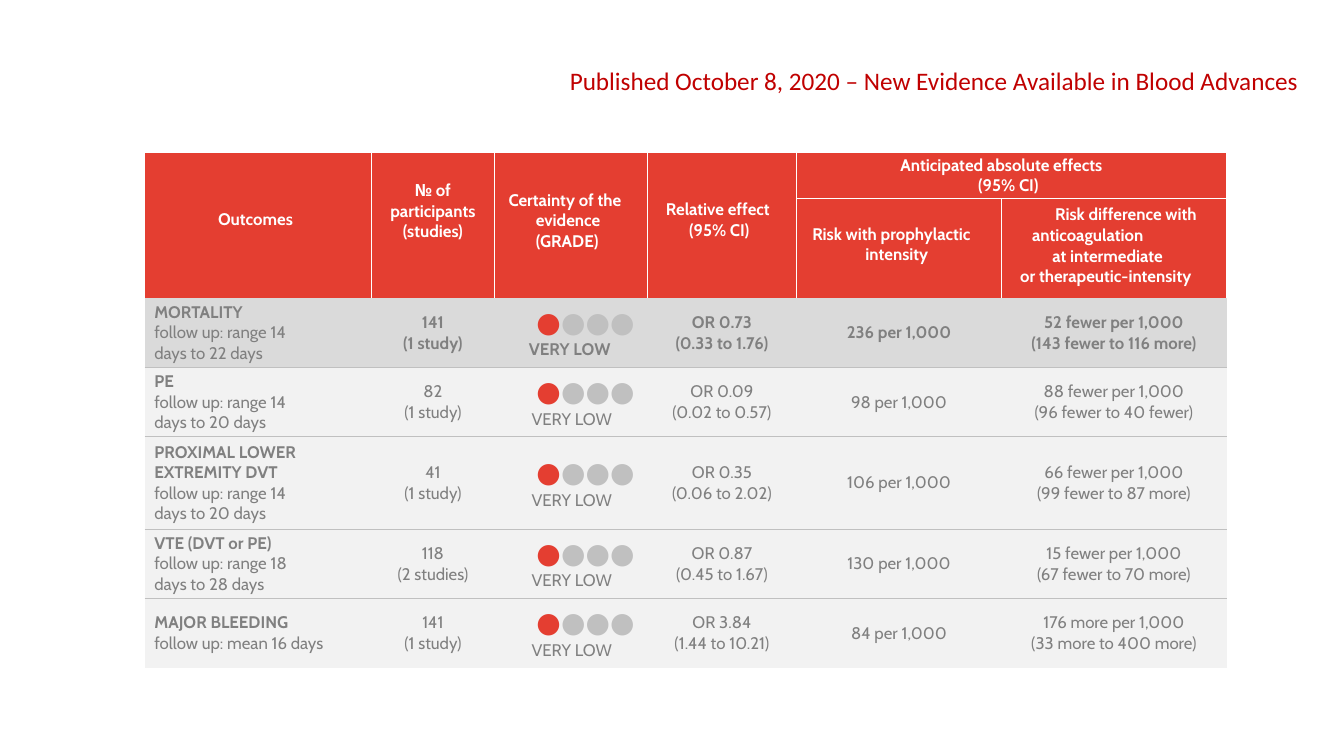
from dataclasses import dataclass
from lxml.etree import SubElement
from pptx import Presentation
from pptx.dml.color import RGBColor
from pptx.enum.text import MSO_ANCHOR, PP_ALIGN
from pptx.oxml.ns import qn
from pptx.util import Pt

RED = RGBColor(0xE4, 0x3E, 0x31)
DARK = RGBColor(0xC0, 0x00, 0x00)
WHITE = RGBColor(0xFF, 0xFF, 0xFF)
GRAY = RGBColor(0x80, 0x80, 0x80)
RULE = RGBColor(0xC0, 0xC0, 0xC0)
BAND = RGBColor(0xDA, 0xDA, 0xDA)
PALE = RGBColor(0xF2, 0xF2, 0xF2)
PLAIN = "{2D5ABB26-0587-4C30-8999-92F81FD0307C}"  # table style without lines or fills

COLS = (162, 88, 109, 107, 146, 161)
ROWS = (33, 71, 49.5, 49.5, 66, 49.5, 49.5)


@dataclass
class Line:
    text: str
    left: float = 0
    first: float = 0


@dataclass
class Head:
    row: int
    col: int
    lines: list[Line]
    foot: float = 0
    side: float = 0
    align: PP_ALIGN = PP_ALIGN.LEFT


@dataclass
class Outcome:
    name: str
    follow: str
    count: str
    study: str
    ratio: str
    range: str
    risk: str
    change: str
    span: str
    strong: bool = False
    side: float = 45


HEADS = [
    Head(0, 0, [Line("Outcomes", 52.5)], foot=9),
    Head(0, 1, [Line("№ of participants (studies)")], foot=20, side=10, align=PP_ALIGN.CENTER),
    Head(0, 2, [Line("Certainty of the evidence (GRADE)", 29.5, -19.5)], foot=7),
    Head(0, 3, [Line("Relative effect (95% CI)", 30, -16.5)], foot=8),
    Head(0, 4, [Line("Anticipated absolute effects (95% CI)", 129.5, -55.5)], side=80),
    Head(1, 4, [Line("Risk with prophylactic intensity", 49, -38)], foot=6),
    Head(1, 5, [Line("Risk difference with anticoagulation", 22, 16.5),
                Line("at intermediate", 36.5),
                Line("or therapeutic-intensity", 13.5)], foot=4),
]

OUTCOMES = [
    Outcome("MORTALITY", "follow up: range 14 days to 22 days", "141", "(1 study)", "OR 0.73",
            "(0.33 to 1.76)", "236 per 1,000", "52 fewer per 1,000",
            "(143 fewer to 116 more)", strong=True),
    Outcome("PE", "follow up: range 14 days to 20 days", "82", "(1 study)", "OR 0.09",
            "(0.02 to 0.57)", "98 per 1,000", "88 fewer per 1,000", "(96 fewer to 40 fewer)"),
    Outcome("PROXIMAL LOWER EXTREMITY DVT", "follow up: range 14 days to 20 days", "41", "(1 study)",
            "OR 0.35", "(0.06 to 2.02)", "106 per 1,000", "66 fewer per 1,000",
            "(99 fewer to 87 more)"),
    Outcome("VTE (DVT or PE)", "follow up: range 18 days to 28 days", "118", "(2 studies)", "OR 0.87",
            "(0.45 to 1.67)", "130 per 1,000", "15 fewer per 1,000", "(67 fewer to 70 more)"),
    Outcome("MAJOR BLEEDING", "follow up: mean 16 days", "141", "(1 study)", "OR 3.84",
            "(1.44 to 10.21)", "84 per 1,000", "176 more per 1,000", "(33 more to 400 more)",
            side=10),
]


def write(para, text: str, *, size: float = 12, color: RGBColor = GRAY, bold: bool = False,
          face: str = "Cabin", align: PP_ALIGN = PP_ALIGN.LEFT, left: float = 0,
          first: float = 0) -> None:
    """Add a run to a paragraph and format both."""
    para.alignment = align
    props = para._p.get_or_add_pPr()
    props.set("marL", str(Pt(left)))
    props.set("indent", str(Pt(first)))
    run = para.add_run()
    run.text = text
    font = run.font
    font.name, font.size, font.bold = face, Pt(size), bold
    font.color.rgb = color


def style(cell, fill: RGBColor, edges: str, color: RGBColor) -> None:
    """Set margins, borders on the named edges (L, R, T, B) and fill."""
    cell.margin_left = cell.margin_right = cell.margin_top = cell.margin_bottom = 0
    cell.vertical_anchor = MSO_ANCHOR.MIDDLE
    props = cell._tc.get_or_add_tcPr()
    for edge in "LRTB":
        line = SubElement(props, qn(f"a:ln{edge}"), w=str(Pt(1)))
        if edge in edges:
            solid = SubElement(line, qn("a:solidFill"))
            SubElement(solid, qn("a:srgbClr"), val=str(color))
        else:
            SubElement(line, qn("a:noFill"))
    cell.fill.solid()
    cell.fill.fore_color.rgb = fill


def add_para(frame, index: int):
    return frame.paragraphs[0] if index == 0 else frame.add_paragraph()


def fill_head(table) -> None:
    for row in range(2):
        for col in range(len(COLS)):
            edges = "LRT" if row == 0 else "LR"
            if col >= 4:
                edges = "LRTB" if row == 0 else "LRT"
            style(table.cell(row, col), RED, edges, WHITE)
    for col in range(4):
        table.cell(0, col).merge(table.cell(1, col))
    table.cell(0, 4).merge(table.cell(0, 5))
    for head in HEADS:
        cell = table.cell(head.row, head.col)
        cell.margin_bottom, cell.margin_right = Pt(head.foot), Pt(head.side)
        if head.align == PP_ALIGN.CENTER:
            cell.margin_left = Pt(head.side)
        for index, line in enumerate(head.lines):
            write(add_para(cell.text_frame, index), line.text, color=WHITE, bold=True,
                  align=head.align, left=line.left, first=line.first)


def fill_row(table, row: int, item: Outcome) -> None:
    edges = "B" if row == 2 else "T" if row == len(ROWS) - 1 else "TB"
    cells = [table.cell(row, col) for col in range(len(COLS))]
    for cell in cells:
        style(cell, BAND if item.strong else PALE, edges, RULE)

    # Outcome and follow-up
    cells[0].margin_right = Pt(item.side)
    frame = cells[0].text_frame
    write(add_para(frame, 0), item.name, bold=True, left=7)
    write(add_para(frame, 1), item.follow, left=7)

    # Certainty rating
    frame = cells[2].text_frame
    dots = add_para(frame, 0)
    write(dots, "●", size=20, color=RED, left=30)
    write(dots, "●●●", size=20, color=RULE, left=30)
    write(add_para(frame, 1), "VERY LOW", bold=item.strong, left=24.5 if item.strong else 26.5)

    # Figures
    for col, lines in ((1, (item.count, item.study)), (3, (item.ratio, item.range)),
                       (4, (item.risk,)), (5, (item.change, item.span))):
        for index, text in enumerate(lines):
            write(add_para(cells[col].text_frame, index), text, bold=item.strong,
                  align=PP_ALIGN.CENTER)


def main() -> None:
    deck = Presentation()
    deck.slide_width, deck.slide_height = Pt(960), Pt(540)
    slide = deck.slides.add_slide(deck.slide_layouts[6])

    # Evidence table
    table = slide.shapes.add_table(len(ROWS), len(COLS), Pt(103.25), Pt(109),
                                   Pt(sum(COLS)), Pt(sum(ROWS))).table
    table._tbl.tblPr.find(qn("a:tableStyleId")).text = PLAIN
    table.first_row = table.horz_banding = False
    for col, width in zip(table.columns, COLS):
        col.width = Pt(width)
    for row, height in zip(table.rows, ROWS):
        row.height = Pt(height)
    fill_head(table)
    for row, item in enumerate(OUTCOMES, 2):
        fill_row(table, row, item)

    # Heading
    frame = slide.shapes.add_textbox(Pt(406), Pt(46), Pt(530), Pt(24)).text_frame
    frame.margin_left = frame.margin_right = frame.margin_bottom = 0
    frame.margin_top = Pt(1)
    frame.word_wrap = True
    write(frame.paragraphs[0],
          "Published October 8, 2020 – New Evidence Available in Blood Advances",
          size=18, color=DARK, face="Calibri", left=1)
    deck.save("out.pptx")


if __name__ == "__main__":
    main()
